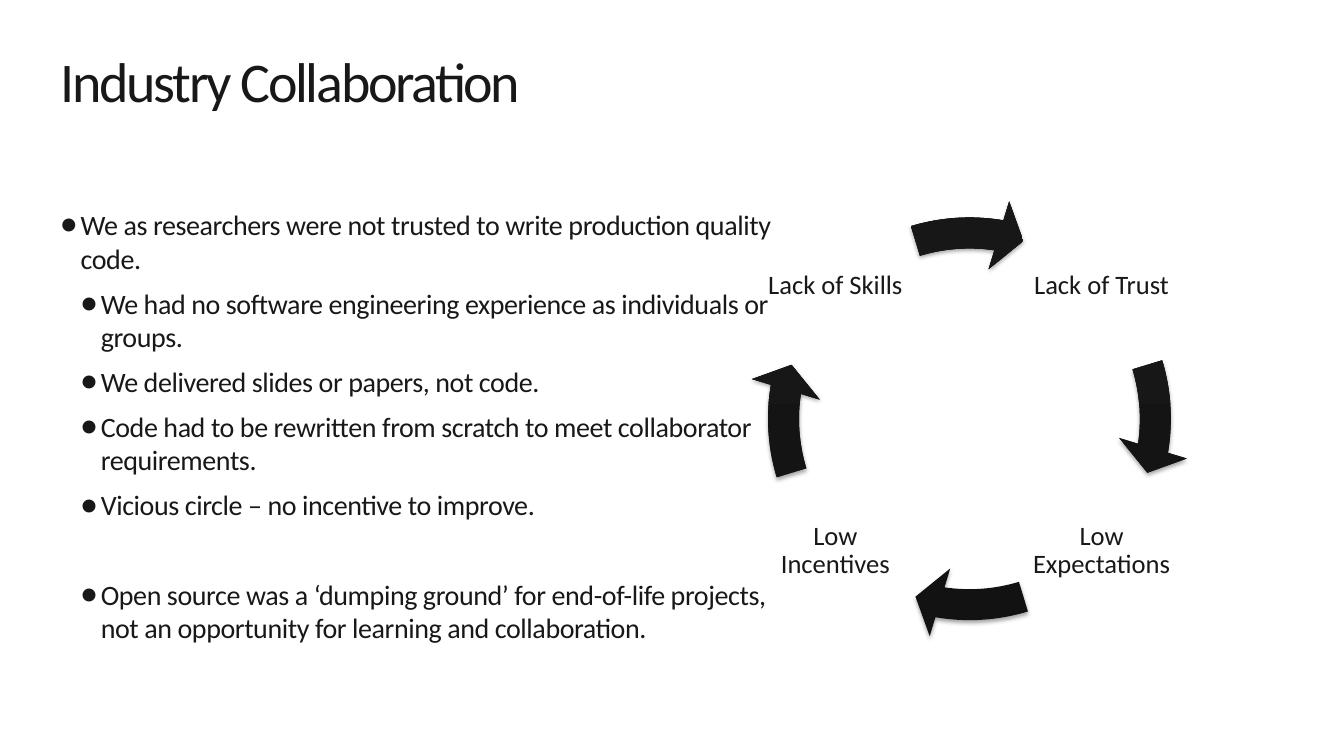
from lxml.etree import SubElement
from pptx import Presentation
from pptx.dml.color import RGBColor
from pptx.enum.shapes import MSO_SHAPE
from pptx.enum.text import MSO_ANCHOR, PP_ALIGN
from pptx.oxml import parse_xml
from pptx.oxml.ns import nsdecls, qn
from pptx.util import Inches, Pt


def color(code):
    return RGBColor.from_string(code)


def write(para, text, size, track=0):
    run = para.add_run()
    run.text = text
    look = {"name": "Calibri", "size": Pt(size)}
    for key, value in look.items():
        setattr(run.font, key, value)
    run.font.color.rgb = color("181818")
    if track:
        run._r.get_or_add_rPr().set("spc", str(track))


deck = Presentation()
deck.slide_width, deck.slide_height = Inches(13.33), Inches(7.5)
slide = deck.slides.add_slide(deck.slide_layouts[6])
shapes = slide.shapes

pad = {
    "word_wrap": True,
    "margin_left": Inches(0.08),
    "margin_right": Inches(0.08),
    "margin_top": Inches(0.04),
    "margin_bottom": Inches(0.04),
}

title = shapes.add_textbox(Inches(0.52), Inches(0.52), Inches(11.51), Inches(1.18)).text_frame
body = shapes.add_textbox(Inches(0.52), Inches(2.02), Inches(7.24), Inches(4.8)).text_frame
for frame in (title, body):
    for key, value in pad.items():
        setattr(frame, key, value)

title.paragraphs[0].line_spacing = 0.85
write(title.paragraphs[0], "Industry Collaboration", 40, -160)

points = [
    (0, 0, "We as researchers were not trusted to write production quality code."),
    (1, 8, "We had no software engineering experience as individuals or groups."),
    (1, 8, "We delivered slides or papers, not code."),
    (1, 8, "Code had to be rewritten from scratch to meet collaborator requirements."),
    (1, 8, "Vicious circle – no incentive to improve."),
    (1, 40, "Open source was a ‘dumping ground’ for end-of-life projects, "
            "not an opportunity for learning and collaboration."),
]
for row, (level, gap, text) in enumerate(points):
    para = body.add_paragraph() if row else body.paragraphs[0]
    props = para._p.get_or_add_pPr()
    props.set("marL", str(Inches(0.2 * (level + 1))))
    props.set("indent", str(Inches(-0.2)))
    SubElement(props, qn("a:buFont"), typeface="Calibri")
    SubElement(props, qn("a:buChar"), char="●")
    para.level = level
    para.space_before = Pt(gap)
    write(para, text, 20, -30)

left, right, top, low = 7.51, 10.15, 2.06, 4.69
steps = [
    ("Lack of Trust", right, top),
    ("Low Expectations", right, low),
    ("Low Incentives", left, low),
    ("Lack of Skills", left, top),
]
inset = {
    "word_wrap": True,
    "vertical_anchor": MSO_ANCHOR.MIDDLE,
    "margin_left": Inches(0.03),
    "margin_right": Inches(0.03),
    "margin_top": Inches(0.03),
    "margin_bottom": Inches(0.03),
}
quarter = 54
for turn, (text, x, y) in enumerate(steps):
    frame = shapes.add_textbox(Inches(x), Inches(y), Inches(1.55), Inches(1.55)).text_frame
    for key, value in inset.items():
        setattr(frame, key, value)
    para = frame.paragraphs[0]
    para.alignment = PP_ALIGN.CENTER
    para.line_spacing = 0.9
    write(para, text, 19)

    arrow = shapes.add_shape(
        MSO_SHAPE.CIRCULAR_ARROW, Inches(7.42), Inches(1.96), Inches(4.39), Inches(4.39))
    tip = 5.47 + quarter * turn
    tail = (205.87 + quarter * turn) % (4 * quarter)
    for spot, value in enumerate((0.07, 4.66, tip, tail, 0.08)):
        arrow.adjustments[spot] = value
    arrow.line.fill.background()
    arrow.fill.gradient()
    arrow.fill.gradient_angle = 90
    for stop, place, code in zip(arrow.fill.gradient_stops, (0, 0.8), ("121212", "171717")):
        stop.position = place
        stop.color.rgb = color(code)
    arrow.shadow.inherit = False
    arrow._element.spPr.find(qn("a:effectLst")).append(parse_xml(
        f'<a:outerShdw {nsdecls("a")} blurRad="{Pt(3.1)}" dist="{Pt(1.8)}" dir="5400000" '
        'rotWithShape="0"><a:srgbClr val="000000"><a:alpha val="35000"/></a:srgbClr>'
        '</a:outerShdw>'))

deck.save("out.pptx")
